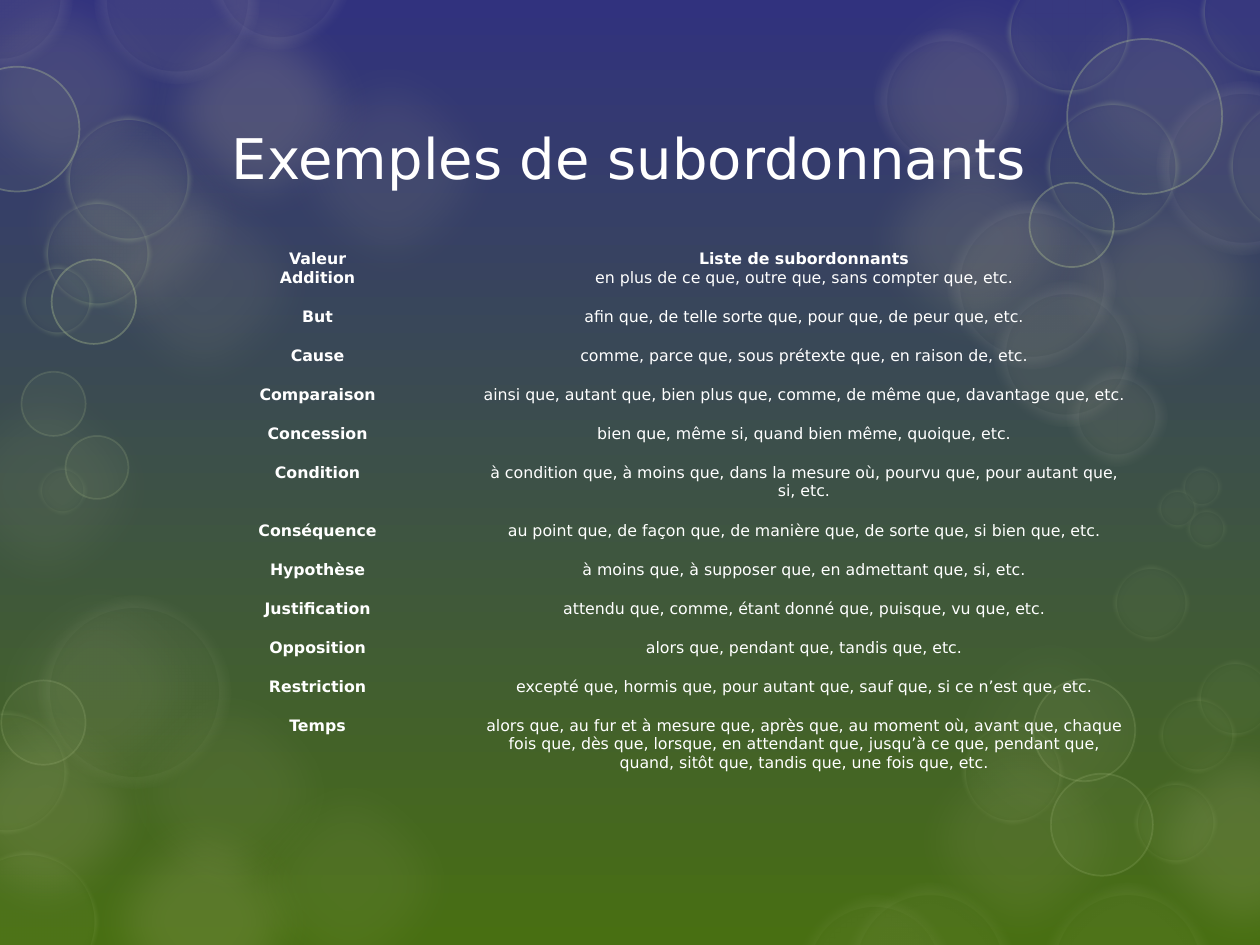
from lxml.etree import SubElement
from pptx import Presentation
from pptx.dml.color import RGBColor
from pptx.enum.shapes import MSO_SHAPE
from pptx.enum.text import MSO_ANCHOR, PP_ALIGN
from pptx.oxml.ns import qn
from pptx.util import Inches, Pt

HUES = {"night": "31327E", "grass": "486F12", "sand": "C4BD97",
        "cream": "F5F4ED", "lime": "C3D69B", "white": "FFFFFF"}
FONT = "DejaVu Sans"
PLAIN = "{2D5ABB26-0587-4C30-8999-92F81FD0307C}"

BLOBS = [(-0.26, 4.42, 8), (0.57, 1.2, 10), (2.05, 0.31, 10), (0.57, 6.27, 16),
         (-0.56, -0.33, 14), (1.01, -0.18, 20), (0, 0.72, 15), (6.69, -0.3, 10),
         (8.2, -0.33, 10), (8.2, 1.2, 15), (8.81, 5.62, 16), (7.29, 4.77, 5),
         (-0.69, 5.41, 16), (0.77, 5.24, 8), (6.69, 0.86, 15), (7.06, 5.62, 10),
         (1.73, 5.96, 8), (-0.69, 2.82, 8)]
HAZE = [(9.18, 0.65, 1.37), (6.94, 0.23, 1.14), (7.52, 1.59, 1.33),
        (7.89, 2.24, 1.14), (8.47, 2.91, 0.79), (0.75, -0.65, 1.31),
        (1.64, -0.75, 1.14), (-0.57, -0.58, 1.14)]
MIST = [(0.3, 4.73, 1.53), (6.32, 7.1, 1.24), (6.7, 7.01, 1.36), (8.28, 7.01, 1.34)]
SHARP_HIGH = [(-0.36, 0.53, 0.99), (0.41, 2.06, 0.67), (8.47, 0.31, 1.23),
              (8.17, 1.45, 0.67)]
SHARP_LOW = [(0.01, 5.4, 0.67), (8.34, 6.14, 0.81), (8.2, 5.39, 0.81),
             (0.17, 2.95, 0.51), (0.52, 3.46, 0.5)]
SOFT_HIGH = [(0.52, 0.92, 1), (0.35, 1.59, 0.85), (0.17, 2.1, 0.57),
             (7.99, -0.24, 0.99), (9.53, -0.4, 1), (9.75, 0.77, 1.1),
             (8.3, 0.8, 1.06)]
SOFT_LOW = [(-0.35, 6.75, 1.13), (-0.44, 5.64, 0.98), (7.63, 5.73, 0.81),
            (9, 6.2, 0.66), (8.83, 4.48, 0.61), (9.2, 5.53, 0.61),
            (9.5, 5.24, 0.61), (9.37, 3.7, 0.33), (9.18, 3.87, 0.33),
            (9.41, 4.03, 0.33), (0.3, 3.7, 0.39)]

ROWS = [
    ("Valeur", "Liste de subordonnants"),
    ("Addition", "en plus de ce que, outre que, sans compter que, etc."),
    ("But", "afin que, de telle sorte que, pour que, de peur que, etc."),
    ("Cause", "comme, parce que, sous prétexte que, en raison de, etc."),
    ("Comparaison", "ainsi que, autant que, bien plus que, comme, de même que, "
     "davantage que, etc."),
    ("Concession", "bien que, même si, quand bien même, quoique, etc."),
    ("Condition", "à condition que, à moins que, dans la mesure où, pourvu que, "
     "pour autant que, si, etc."),
    ("Conséquence", "au point que, de façon que, de manière que, de sorte que, "
     "si bien que, etc."),
    ("Hypothèse", "à moins que, à supposer que, en admettant que, si, etc."),
    ("Justification", "attendu que, comme, étant donné que, puisque, vu que, etc."),
    ("Opposition", "alors que, pendant que, tandis que, etc."),
    ("Restriction", "excepté que, hormis que, pour autant que, sauf que, "
     "si ce n’est que, etc."),
    ("Temps", "alors que, au fur et à mesure que, après que, au moment où, "
     "avant que, chaque fois que, dès que, lorsque, en attendant que, "
     "jusqu’à ce que, pendant que, quand, sitôt que, tandis que, "
     "une fois que, etc."),
]
TALL = {0: 0.15, 6: 0.46, 12: 0.76}


def tint(name):
    """Return the named colour."""
    return RGBColor.from_string(HUES[name])


def write(frame, text, size=9, bold=False, hue="white"):
    """Put one centred line of formatted text in a frame."""
    para = frame.paragraphs[0]
    para.alignment = PP_ALIGN.CENTER
    run = para.add_run()
    run.text = text
    font = run.font
    font.name, font.size, font.bold = FONT, Pt(size), bold
    font.color.rgb = tint(hue)


def bubble(slide, x, y, d, fill="sand", alpha=10, line=None, width=1, veil=30, blur=0):
    """Add a see-through circle with an optional ring and soft edge."""
    shape = slide.shapes.add_shape(
        MSO_SHAPE.OVAL, Inches(x), Inches(y), Inches(d), Inches(d))
    shape.shadow.inherit = False
    shape.fill.solid()
    shape.fill.fore_color.rgb = tint(fill)
    if line:
        shape.line.color.rgb = tint(line)
        shape.line.width = Pt(width)
    else:
        shape.line.fill.background()
    props = shape.element.spPr
    for color, part in zip(props.iter(qn("a:srgbClr")), (alpha, veil)):
        SubElement(color, qn("a:alpha"), val=str(part * 1000))
    if blur:
        SubElement(props.find(qn("a:effectLst")), qn("a:softEdge"),
                   rad=str(Pt(blur)))


def scene(slide):
    """Paint the gradient and all the bubbles."""
    fill = slide.background.fill
    fill.gradient()
    fill.gradient_angle = 270
    for stop, name in zip(fill.gradient_stops, ("night", "grass")):
        stop.color.rgb = tint(name)
    for x, y, alpha in BLOBS:
        bubble(slide, x, y, 2.09, alpha=alpha, blur=25)
    for group, alpha, veil in ((HAZE, 10, 6), (MIST, 6, 4)):
        for spot in group:
            bubble(slide, *spot, alpha=alpha, line="cream", width=14,
                   veil=veil, blur=9)
    for group, width, veil, blur in ((SHARP_HIGH, 1, 30, 0), (SHARP_LOW, 1, 15, 0),
                                     (SOFT_HIGH, 5, 30, 4), (SOFT_LOW, 5, 15, 4)):
        for spot in group:
            bubble(slide, *spot, fill="lime", alpha=5, line="lime",
                   width=width, veil=veil, blur=blur)


def title(slide, text):
    """Add the heading."""
    box = slide.shapes.add_textbox(Inches(1.1), Inches(0.74), Inches(7.79), Inches(1.01))
    frame = box.text_frame
    frame.word_wrap = True
    frame.vertical_anchor = MSO_ANCHOR.MIDDLE
    write(frame, text, size=32)


def grid(slide):
    """Add the table of values and their conjunctions."""
    item = slide.shapes.add_table(len(ROWS), 2, Inches(1.22), Inches(1.98),
                                  Inches(7.72), Inches(4.43))
    for style in item.element.iter(qn("a:tableStyleId")):
        style.text = PLAIN
    table = item.table
    table.first_row = table.horz_banding = False
    for column, width in zip(table.columns, (2.6, 5.12)):
        column.width = Inches(width)
    for i, texts in enumerate(ROWS):
        table.rows[i].height = Inches(TALL.get(i, 0.31))
        for j, text in enumerate(texts):
            cell = table.cell(i, j)
            cell.fill.background()
            cell.margin_left = cell.margin_right = 0
            cell.margin_top = cell.margin_bottom = 0
            write(cell.text_frame, text, bold=i == 0 or j == 0)


def main():
    """Build and save the slide."""
    deck = Presentation()
    deck.slide_width, deck.slide_height = Inches(10), Inches(7.5)
    slide = deck.slides.add_slide(deck.slide_layouts[6])
    scene(slide)
    title(slide, "Exemples de subordonnants")
    grid(slide)
    deck.save("out.pptx")


if __name__ == "__main__":
    main()
